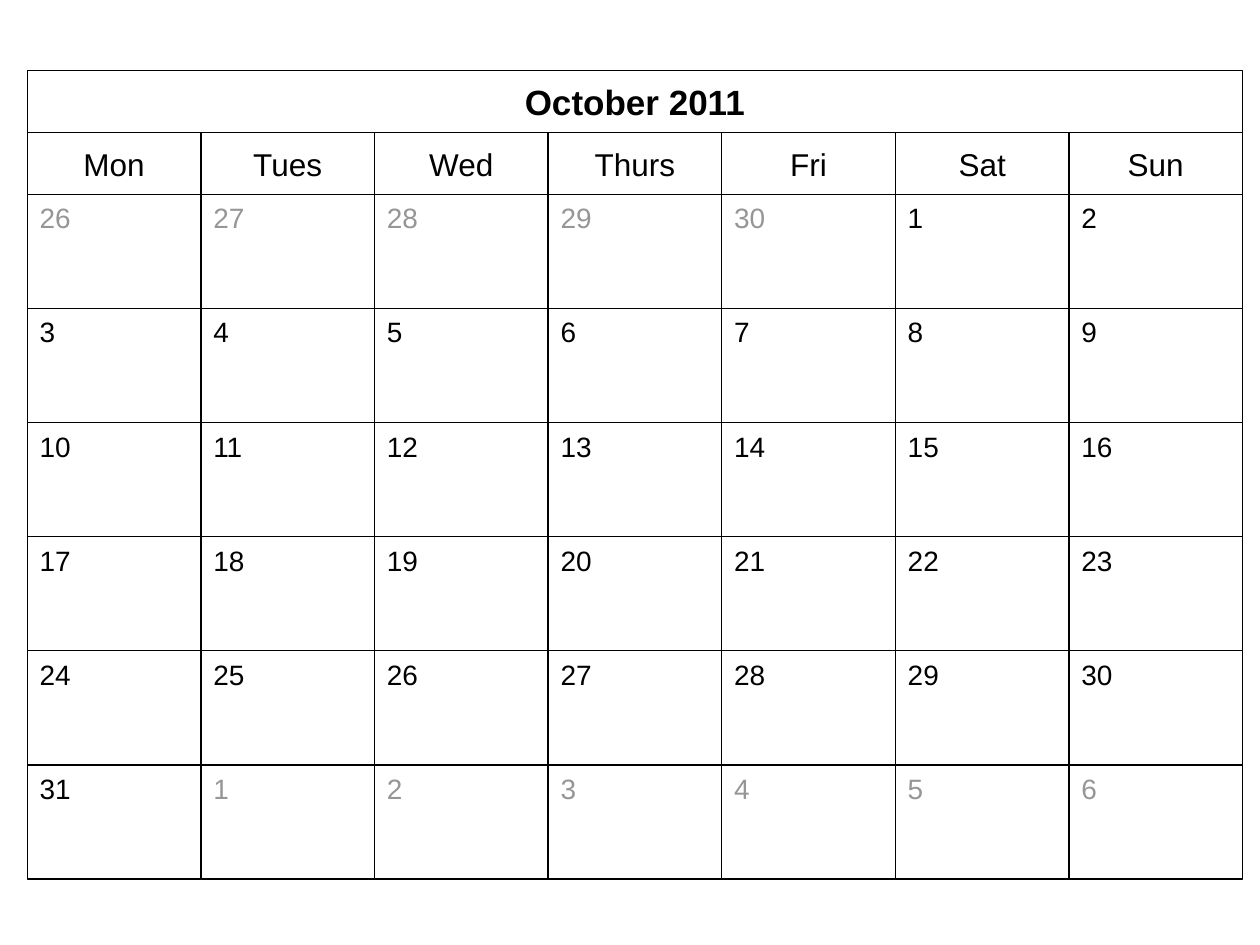
from pptx import Presentation
from pptx.dml.color import RGBColor
from pptx.enum.shapes import MSO_SHAPE
from pptx.enum.text import MSO_ANCHOR, MSO_AUTO_SIZE, PP_ALIGN
from pptx.util import Cm, Pt

RECT = MSO_SHAPE.RECTANGLE
TOP, MIDDLE = MSO_ANCHOR.TOP, MSO_ANCHOR.MIDDLE
LEFT, CENTER = PP_ALIGN.LEFT, PP_ALIGN.CENTER
NO_AUTOFIT = MSO_AUTO_SIZE.NONE

MONTH = "October 2011"
WEEKDAYS = ["Mon", "Tues", "Wed", "Thurs", "Fri", "Sat", "Sun"]
PREVIOUS_DAYS = range(26, 31)
MONTH_DAYS = range(1, 32)
NEXT_DAYS = range(1, 7)

THEME = {
    "font": "Arial",
    "paper": RGBColor(0xFF, 0xFF, 0xFF),
    "ink": RGBColor(0x00, 0x00, 0x00),
    "muted": RGBColor(0x96, 0x96, 0x96),
    "line": Pt(0.75),
    "month": Pt(20),
    "weekday": Pt(18),
    "day": Pt(16),
}

GRID_LEFT, GRID_TOP = 0.55, 1.42
COL_W, HEAD_H, DAY_H = 3.5, 1.25, 2.3
WEEKDAY_TOP = GRID_TOP + HEAD_H
DAYS_TOP = WEEKDAY_TOP + HEAD_H


def place(s, left, top, width, height):
    s.left, s.top, s.width, s.height = Cm(left), Cm(top), Cm(width), Cm(height)


def style_box(s, text, size, color, bold=False, heading=False):
    s.line.color.rgb = THEME["ink"]
    s.line.width = THEME["line"]
    tf = s.text_frame
    tf.word_wrap = True
    tf.auto_size = NO_AUTOFIT
    tf.vertical_anchor = MIDDLE if heading else TOP
    tf.margin_left = tf.margin_right = Cm(0.25)
    tf.margin_top = tf.margin_bottom = Cm(0.05 if heading else 0.13)
    if heading:
        s.fill.solid()
        s.fill.fore_color.rgb = THEME["paper"]
    else:
        s.fill.background()
    p = tf.paragraphs[0]
    p.text = text
    p.alignment = CENTER if heading else LEFT
    p.font.name = THEME["font"]
    p.font.size = size
    p.font.bold = bold
    p.font.color.rgb = color


def add_cell(slide, col, top, height, *text_style, **options):
    s = slide.shapes.add_shape(RECT, 0, 0, 0, 0)
    place(s, GRID_LEFT + col * COL_W, top, COL_W, height)
    s.shadow.inherit = False
    style_box(s, *text_style, **options)


def main():
    prs = Presentation()
    prs.slide_width, prs.slide_height = Cm(25.4), Cm(19.05)
    slide = prs.slides.add_slide(prs.slide_layouts[5])

    title = slide.shapes.title
    place(title, GRID_LEFT, GRID_TOP, COL_W * len(WEEKDAYS), HEAD_H)
    style_box(title, MONTH, THEME["month"], THEME["ink"], bold=True, heading=True)

    for col, name in enumerate(WEEKDAYS):
        add_cell(slide, col, WEEKDAY_TOP, HEAD_H,
                 name, THEME["weekday"], THEME["ink"], heading=True)

    days = [(day, THEME[color])
            for span, color in ((PREVIOUS_DAYS, "muted"), (MONTH_DAYS, "ink"),
                                (NEXT_DAYS, "muted"))
            for day in span]
    for i, (day, color) in enumerate(days):
        week, col = divmod(i, len(WEEKDAYS))
        add_cell(slide, col, DAYS_TOP + week * DAY_H, DAY_H,
                 str(day), THEME["day"], color)

    prs.save("out.pptx")


if __name__ == "__main__":
    main()
